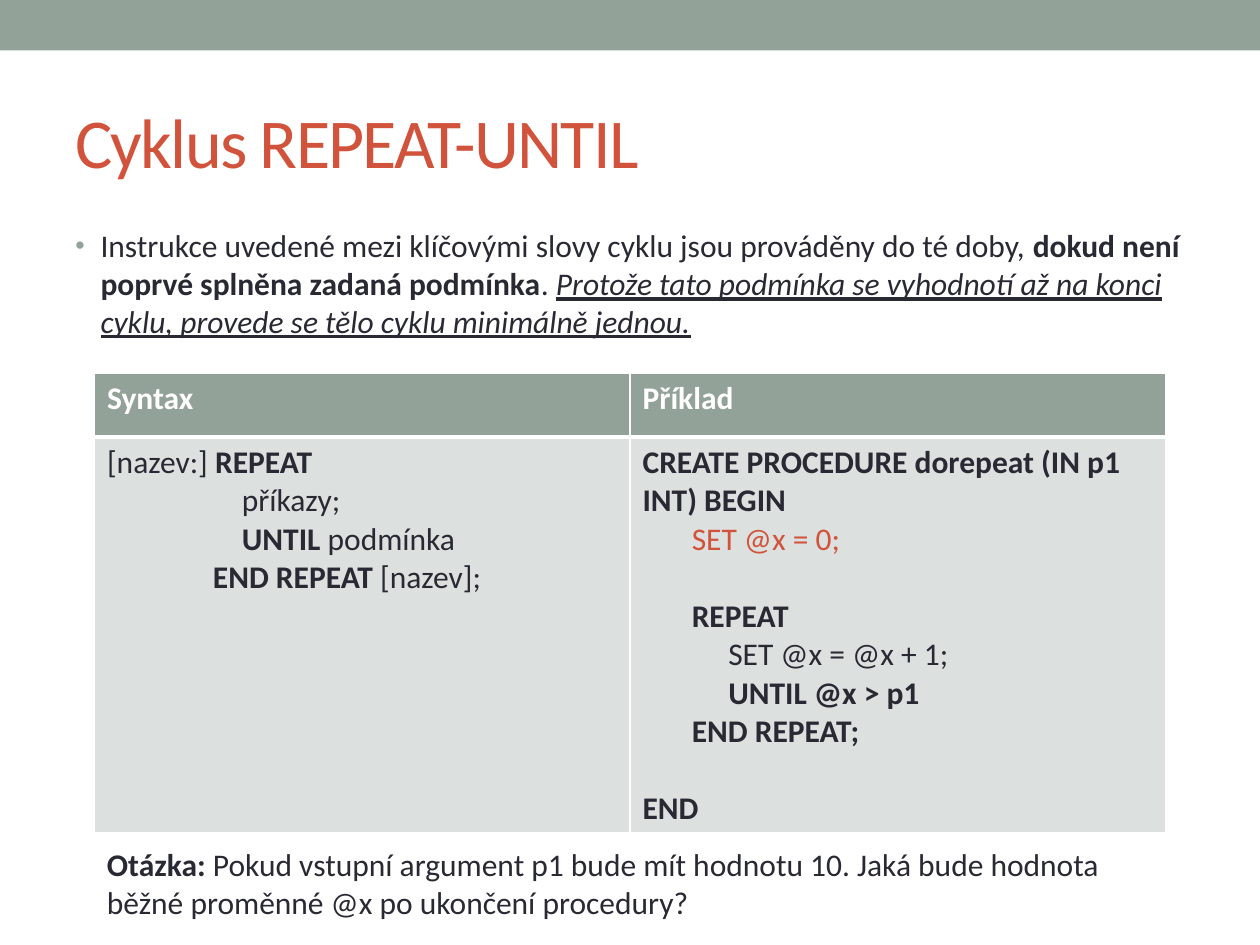
from lxml import etree
from pptx import Presentation
from pptx.dml.color import RGBColor
from pptx.enum.shapes import MSO_SHAPE
from pptx.enum.text import MSO_ANCHOR
from pptx.oxml.ns import qn
from pptx.util import Inches, Pt

RECT = MSO_SHAPE.RECTANGLE
MIDDLE = MSO_ANCHOR.MIDDLE
TOP = MSO_ANCHOR.TOP
HUES = {"sage": "93A299", "red": "D2533C", "ink": "292934", "pale": "DCE0DE", "white": "FFFFFF"}

deck = Presentation()
W = deck.slide_width = Inches(10)
H = deck.slide_height = Inches(7.5)
slide = deck.slides.add_slide(deck.slide_layouts[6])


def write(frame, paras, size=18):
    for n, (left, before, runs) in enumerate(paras):
        para = frame.paragraphs[0] if n == 0 else frame.add_paragraph()
        para.space_before = Pt(before)
        if left:
            para._p.get_or_add_pPr().set("marL", str(Inches(left)))
        for text, hue, style in runs:
            run = para.add_run()
            run.text = text
            font = run.font
            font.name, font.size = "Calibri", Pt(size)
            font.color.rgb = RGBColor.from_string(HUES[hue])
            font.bold = "b" in style
            font.italic = "i" in style
            font.underline = "u" in style


def add_text(x, y, w, h, paras, size=18, anchor=TOP):
    box = slide.shapes.add_textbox(int(W * x), int(H * y), int(W * w), int(H * h))
    frame = box.text_frame
    frame.word_wrap = True
    frame.vertical_anchor = anchor
    write(frame, paras, size)
    return frame


band = slide.shapes.add_shape(RECT, 0, 0, W, Inches(0.4))
band.shadow.inherit = False
band.fill.solid()
band.fill.fore_color.rgb = RGBColor.from_string(HUES["sage"])
band.line.fill.background()

title = add_text(0.05, 0.077, 0.9, 0.144, [(0, 0, [("Cyklus REPEAT-UNTIL", "red", "")])], 40, MIDDLE)
title.paragraphs[0].runs[0]._r.get_or_add_rPr().set("spc", "-100")

body = add_text(0.05, 0.233, 0.9, 0.711, [(0.2, 3.6, [
    ("Instrukce uvedené mezi klíčovými slovy cyklu jsou prováděny do té doby, ", "ink", ""),
    ("dokud není poprvé splněna zadaná podmínka", "ink", "b"),
    (". ", "ink", ""),
    ("Protože tato podmínka se vyhodnotí až na konci cyklu, provede se tělo cyklu minimálně jednou.", "ink", "iu"),
])])
props = body.paragraphs[0]._p.get_or_add_pPr()
props.set("indent", str(Inches(-0.2)))
tint = etree.SubElement(props, qn("a:buClr"))
etree.SubElement(tint, qn("a:srgbClr"), val=HUES["sage"])
etree.SubElement(props, qn("a:buSzPct"), val="85000")
etree.SubElement(props, qn("a:buFont"), typeface="Arial")
etree.SubElement(props, qn("a:buChar"), char="•")

GAP = 22
syntax = [
    (0, 0, [("[nazev:] ", "ink", ""), ("REPEAT", "ink", "b")]),
    (1.07, 0, [("příkazy;", "ink", "")]),
    (1.07, 0, [("UNTIL", "ink", "b"), (" podmínka", "ink", "")]),
    (0.84, 0, [("END REPEAT", "ink", "b"), (" [nazev];", "ink", "")]),
]
sample = [
    (0, 0, [("CREATE PROCEDURE dorepeat (IN p1 INT) BEGIN", "ink", "b")]),
    (0.39, 0, [("SET @x = 0;", "red", "")]),
    (0.39, GAP, [("REPEAT", "ink", "b")]),
    (0.68, 0, [("SET @x = @x + 1;", "ink", "")]),
    (0.68, 0, [("UNTIL @x > p1", "ink", "b")]),
    (0.39, 0, [("END REPEAT;", "ink", "b")]),
    (0, GAP, [("END", "ink", "b")]),
]
heads = [[(0, 0, [(name, "white", "b")])] for name in ("Syntax", "Příklad")]
rows = [(0.51, "sage", heads), (3.14, "pale", [syntax, sample])]

grid = slide.shapes.add_table(2, 2, int(W * 0.075), Inches(2.96), int(W * 0.85), Inches(3.65)).table
for r, (tall, hue, cells) in enumerate(rows):
    grid.rows[r].height = Inches(tall)
    for c, paras in enumerate(cells):
        cell = grid.cell(r, c)
        edges = cell._tc.get_or_add_tcPr()
        for side in "LRTB":
            thick = 3 if (r, side) in ((0, "B"), (1, "T")) else 1
            line = etree.SubElement(edges, qn("a:ln" + side), w=str(Pt(thick)))
            paint = etree.SubElement(line, qn("a:solidFill"))
            etree.SubElement(paint, qn("a:srgbClr"), val=HUES["white"])
        cell.fill.solid()
        cell.fill.fore_color.rgb = RGBColor.from_string(HUES[hue])
        write(cell.text_frame, paras)

add_text(0.075, 0.888, 0.851, 0.095, [(0, 0, [
    ("Otázka: ", "ink", "b"),
    ("Pokud vstupní argument p1 bude mít hodnotu 10. Jaká bude hodnota běžné proměnné @x po ukončení procedury?", "ink", ""),
])])

deck.save("out.pptx")
